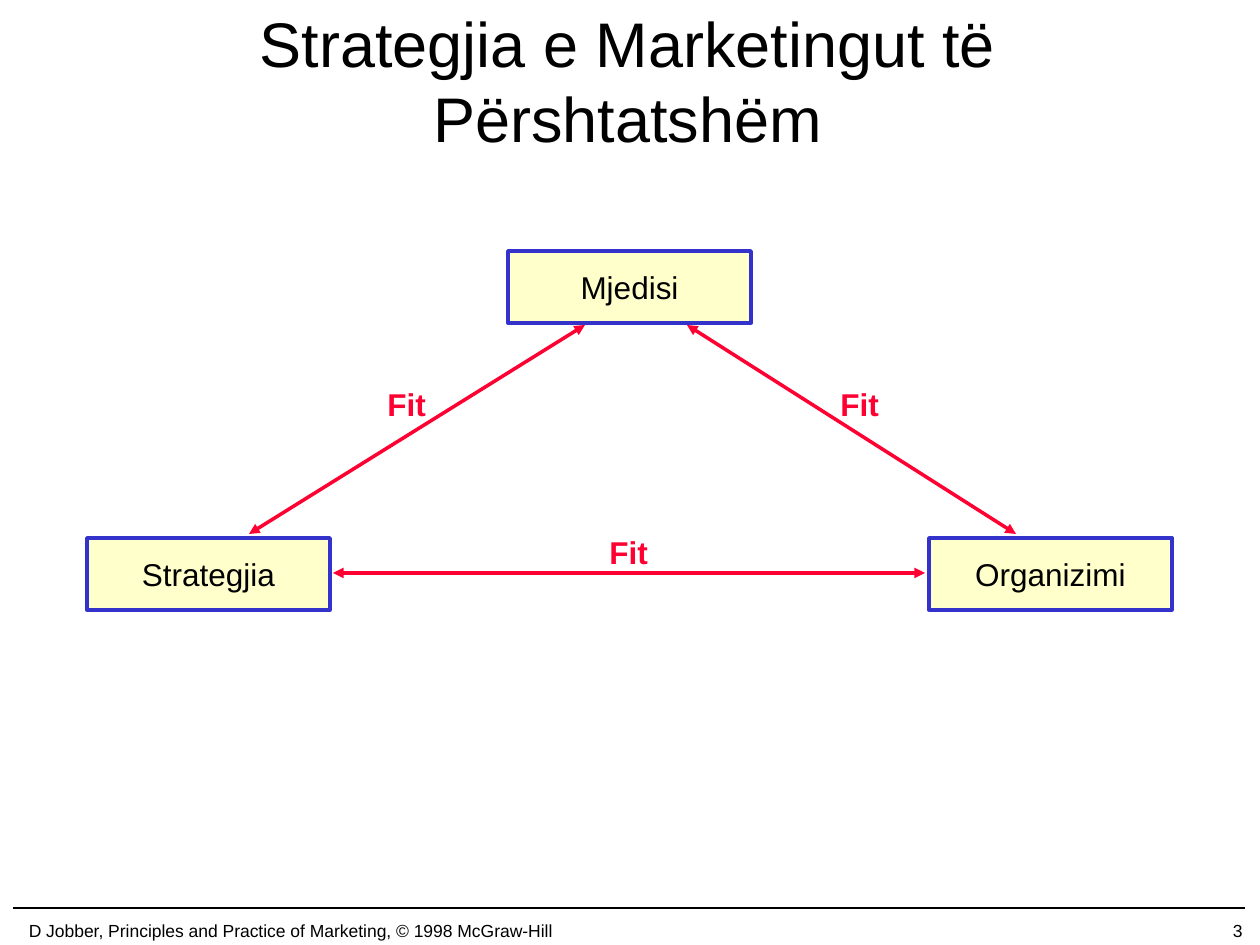
from lxml.etree import SubElement as Sub
from pptx import Presentation
from pptx.dml.color import RGBColor as Rgb
from pptx.enum.shapes import MSO_CONNECTOR as Conn, MSO_SHAPE as Shape
from pptx.enum.text import MSO_ANCHOR as Anchor, PP_ALIGN as Align
from pptx.oxml.ns import qn
from pptx.util import Emu, Pt

SCALE = 914400 / 126
HUES = {"ink": "000000", "fill": "FFFFCC", "edge": "3333CC", "fit": "FF0033"}

BOX_W, BOX_H = 243, 72
BOXES = [("Mjedisi", 508, 251), ("Strategjia", 87, 538), ("Organizimi", 929, 538)]
ARROWS = [(585, 325, 249, 534), (687, 325, 1016, 534), (333, 573, 925, 573)]
FITS = [(375, 379), (828, 379), (597, 527)]


def px(*nums):
    return [Emu(round(n * SCALE)) for n in nums]


def hue(name):
    return Rgb.from_string(HUES[name])


def write(frame, text, size, align=Align.CENTER, tone="ink", bold=False,
          anchor=Anchor.MIDDLE, wrap=False):
    frame.word_wrap = wrap
    frame.vertical_anchor = anchor
    para = frame.paragraphs[0]
    para.text = text
    para.alignment = align
    font = para.font
    font.name, font.size, font.bold = "Arial", Pt(size), bold
    font.color.rgb = hue(tone)


def add_title(slide, text, *area):
    title = slide.shapes.title
    title.left, title.top, title.width, title.height = px(*area)
    write(title.text_frame, text, 36, wrap=True)


def add_label(slide, text, area, size, **look):
    label = slide.shapes.add_textbox(*px(*area))
    write(label.text_frame, text, size, **look)


def add_box(slide, text, x, y):
    box = slide.shapes.add_shape(Shape.RECTANGLE, *px(x, y, BOX_W, BOX_H))
    box.shadow.inherit = False
    box.fill.solid()
    box.fill.fore_color.rgb = hue("fill")
    box.line.color.rgb = hue("edge")
    box.line.width = Pt(2)
    write(box.text_frame, text, 18)


def add_line(slide, ends, tone, width, heads=False):
    link = slide.shapes.add_connector(Conn.STRAIGHT, *px(*ends))
    link.line.color.rgb = hue(tone)
    link.line.width = Pt(width)
    if heads:
        for tag in ("a:headEnd", "a:tailEnd"):
            Sub(link.line._get_or_add_ln(), qn(tag), type="triangle")
    Sub(link._element.spPr, qn("a:effectLst"))


def main():
    deck = Presentation()
    deck.slide_width, deck.slide_height = px(1260, 945)
    slide = deck.slides.add_slide(deck.slide_layouts[5])

    # Footer
    add_line(slide, (13, 908, 1245, 908), "ink", 1)
    add_label(slide, "3", (993, 914, 262, 32), 10, align=Align.RIGHT)
    add_label(slide, "D Jobber, Principles and Practice of Marketing, © 1998 McGraw-Hill",
              (0, 914, 581, 32), 10)

    add_title(slide, "Strategjia e Marketingut të Përshtatshëm", 92, 1, 1071, 158)

    # Triangle of boxes, joined by arrows
    for text, x, y in BOXES:
        add_box(slide, text, x, y)
    for ends in ARROWS:
        add_line(slide, ends, "fit", 2, heads=True)
    for x, y in FITS:
        add_label(slide, "Fit", (x, y, 66, 52), 18, align=Align.LEFT,
                  tone="fit", bold=True, anchor=Anchor.TOP)

    deck.save("out.pptx")


if __name__ == "__main__":
    main()
